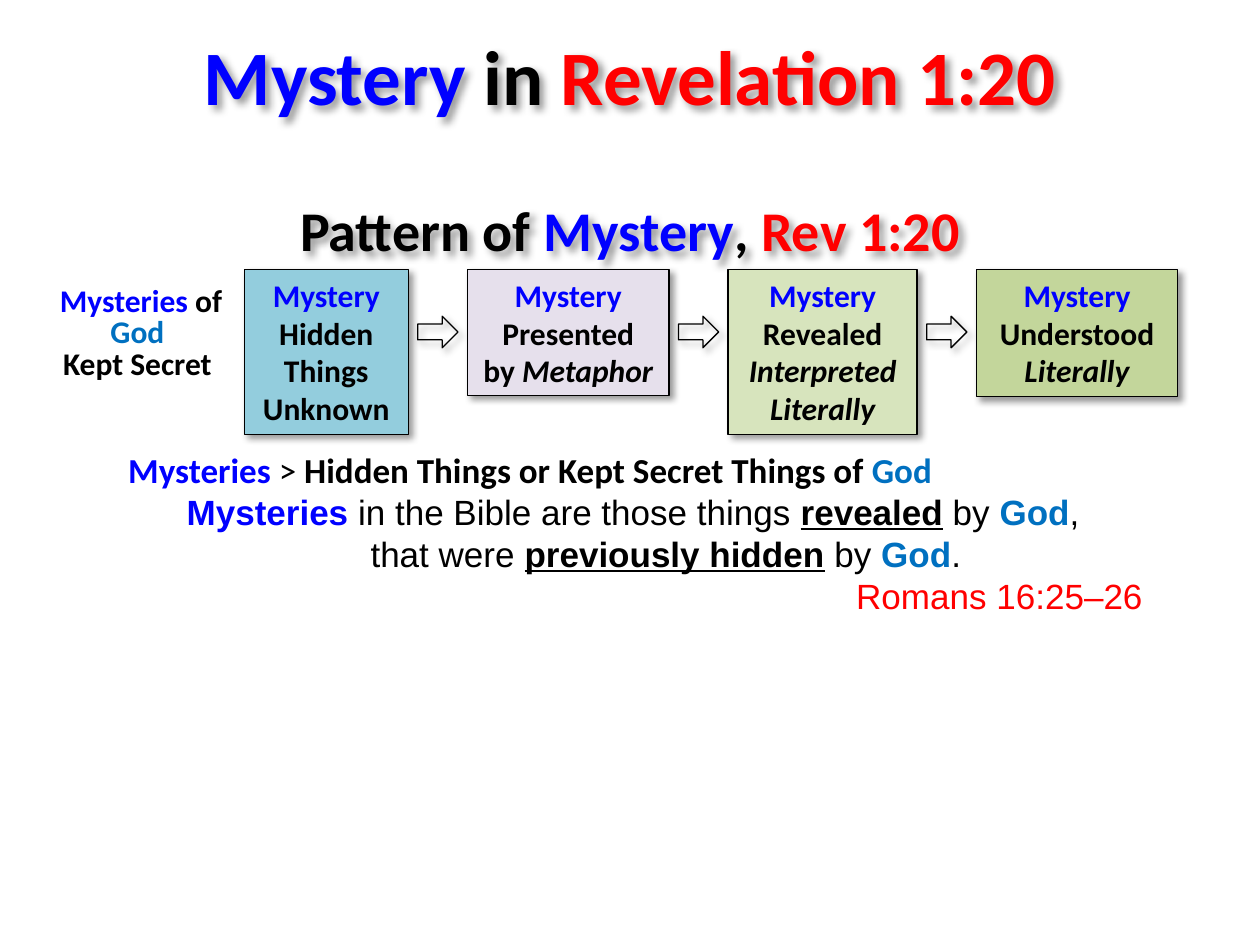
from dataclasses import dataclass

import pptx
import pptx.dml.color
import pptx.enum.shapes
import pptx.enum.text
import pptx.oxml
import pptx.util
from lxml import etree

Pt = pptx.util.Pt
RGB = pptx.dml.color.RGBColor.from_string
ALIGN = pptx.enum.text.PP_ALIGN
ANCHOR = pptx.enum.text.MSO_ANCHOR
SHAPE = pptx.enum.shapes.MSO_SHAPE
DRAWING = "http://schemas.openxmlformats.org/drawingml/2006/main"


# Colours and type sizes
@dataclass(frozen=True)
class Theme:
    black: str = "000000"
    mystery: str = "0000FF"
    god: str = "0070C0"
    verse: str = "FF0000"
    heading: str = "Calibri"
    body: str = "Arial"
    title_size: float = 44
    subtitle_size: float = 32
    definition_size: float = 20
    step_size: float = 18


THEME = Theme()


@dataclass(frozen=True)
class Run:
    text: str
    color: str = THEME.black
    bold: bool | None = None
    italic: bool | None = None
    underline: bool | None = None


@dataclass(frozen=True)
class Para:
    runs: list[Run]
    size: float
    font: str = THEME.heading
    bold: bool = True
    align: ALIGN = ALIGN.CENTER
    spacing: float | None = None
    indent: float = 0


@dataclass(frozen=True)
class Step:
    width: float
    height: float
    fill: str
    lines: list[list[Run]]


def add_shadow(s) -> None:
    """Soft shadow towards the lower right."""
    s.shadow.inherit = False
    effects = s._element.spPr.find(f"{{{DRAWING}}}effectLst")
    effects.append(pptx.oxml.parse_xml(
        f'<a:outerShdw xmlns:a="{DRAWING}" blurRad="{Pt(4)}" dist="{Pt(3)}" '
        'dir="2700000" algn="tl" rotWithShape="0"><a:srgbClr val="000000">'
        '<a:alpha val="40000"/></a:srgbClr></a:outerShdw>'))


def write(tf, paras: list[Para], anchor: ANCHOR = ANCHOR.TOP) -> None:
    tf.word_wrap = True
    tf.auto_size = pptx.enum.text.MSO_AUTO_SIZE.SHAPE_TO_FIT_TEXT
    tf.vertical_anchor = anchor
    for i, para in enumerate(paras):
        p = tf.add_paragraph() if i else tf.paragraphs[0]
        p.alignment = para.align
        p.font.name, p.font.size, p.font.bold = para.font, Pt(para.size), para.bold
        if para.spacing:
            p.line_spacing = Pt(para.spacing)
        if para.indent:
            pPr = p._p.get_or_add_pPr()
            pPr.set("marL", str(Pt(para.indent)))
            pPr.set("indent", "0")
        for run in para.runs:
            r = p.add_run()
            r.text = run.text
            r.font.color.rgb = RGB(run.color)
            r.font.bold, r.font.italic = run.bold, run.italic
            r.font.underline = run.underline


def add_text(slide, x: float, y: float, w: float, h: float, paras: list[Para],
             anchor: ANCHOR = ANCHOR.TOP, shadow: bool = False) -> None:
    s = slide.shapes.add_textbox(Pt(x), Pt(y), Pt(w), Pt(h))
    write(s.text_frame, paras, anchor)
    if shadow:
        add_shadow(s)


def add_outlined(slide, kind: SHAPE, x: float, y: float, w: float, h: float,
                 fill: str | None = None):
    s = slide.shapes.add_shape(kind, Pt(x), Pt(y), Pt(w), Pt(h))
    if fill:
        s.fill.solid()
        s.fill.fore_color.rgb = RGB(fill)
    else:
        s.fill.background()
    s.line.color.rgb = RGB(THEME.black)
    s.line.width = Pt(0.75)
    add_shadow(s)
    return s


def add_steps(slide, steps: list[Step], x: float, y: float, gap: float) -> None:
    """Boxes in a row with an arrow centred in each gap."""
    arrow_w, arrow_h, arrow_y = 23, 18, 180.7
    for i, step in enumerate(steps):
        if i:
            add_outlined(slide, SHAPE.RIGHT_ARROW, x + (gap - arrow_w) / 2,
                         arrow_y, arrow_w, arrow_h)
            x += gap
        s = add_outlined(slide, SHAPE.RECTANGLE, x, y, step.width, step.height, step.fill)
        write(s.text_frame, [Para(line, THEME.step_size) for line in step.lines])
        x += step.width


def main() -> None:
    prs = pptx.Presentation()
    prs.slide_width, prs.slide_height = Pt(720), Pt(540)
    slide = prs.slides.add_slide(prs.slide_layouts[6])
    mystery = Run("Mystery", THEME.mystery)
    god = Run("God", THEME.god, bold=True)

    # Title and subtitle
    add_text(slide, 0, 28, 720, 46, [Para(
        [Run("Mystery ", THEME.mystery), Run("in "), Run("Revelation 1:20", THEME.verse)],
        THEME.title_size, spacing=36)], ANCHOR.MIDDLE, shadow=True)
    add_text(slide, 0, 108, 720, 46, [Para(
        [Run("Pattern of "), mystery, Run(", "), Run("Rev 1:20", THEME.verse)],
        THEME.subtitle_size)], ANCHOR.MIDDLE, shadow=True)

    # Label in front of the steps
    add_text(slide, 26.6, 160.6, 108, 62, [
        Para([Run("Mysteries ", THEME.mystery), Run("of "), Run("God ", THEME.god)],
             THEME.step_size, spacing=18),
        Para([Run("Kept Secret ")], THEME.step_size, spacing=18)])

    # Four steps of the pattern
    add_steps(slide, [
        Step(93.6, 94.3, "93CDDD",
             [[mystery, Run(" Hidden")], [Run("Things")], [Run("Unknown")]]),
        Step(115.2, 72, "E6E0EC",
             [[mystery, Run(" Presented")], [Run("by "), Run("Metaphor", italic=True)]]),
        Step(108, 94.3, "D7E4BD",
             [[mystery, Run(" Revealed")], [Run("Interpreted", italic=True)],
              [Run("Literally", italic=True)]]),
        Step(115.2, 72.7, "C3D69B",
             [[mystery, Run(" Understood "), Run("Literally", italic=True)]]),
    ], x=139.7, y=154.1, gap=33.8)

    # Definition
    def body(runs: list[Run], indent: float) -> Para:
        return Para(runs, THEME.definition_size, THEME.body, False, ALIGN.LEFT, 24, indent)

    add_text(slide, 66.2, 252.7, 614.2, 104.4, [
        Para([Run("Mysteries ", THEME.mystery), Run("> ", bold=False),
              Run("Hidden Things or Kept Secret Things of "), god],
             THEME.definition_size, align=ALIGN.LEFT),
        body([Run("Mysteries ", THEME.mystery, bold=True),
              Run("in the Bible are those things "),
              Run("revealed", bold=True, underline=True), Run(" by "), god, Run(",")], 33.4),
        body([Run("that were "), Run("previously hidden", bold=True, underline=True),
              Run(" by "), god, Run(".")], 138.5),
        body([Run("Romans 16:25–26", THEME.verse)], 416)])

    prs.save("out.pptx")


if __name__ == "__main__":
    main()
